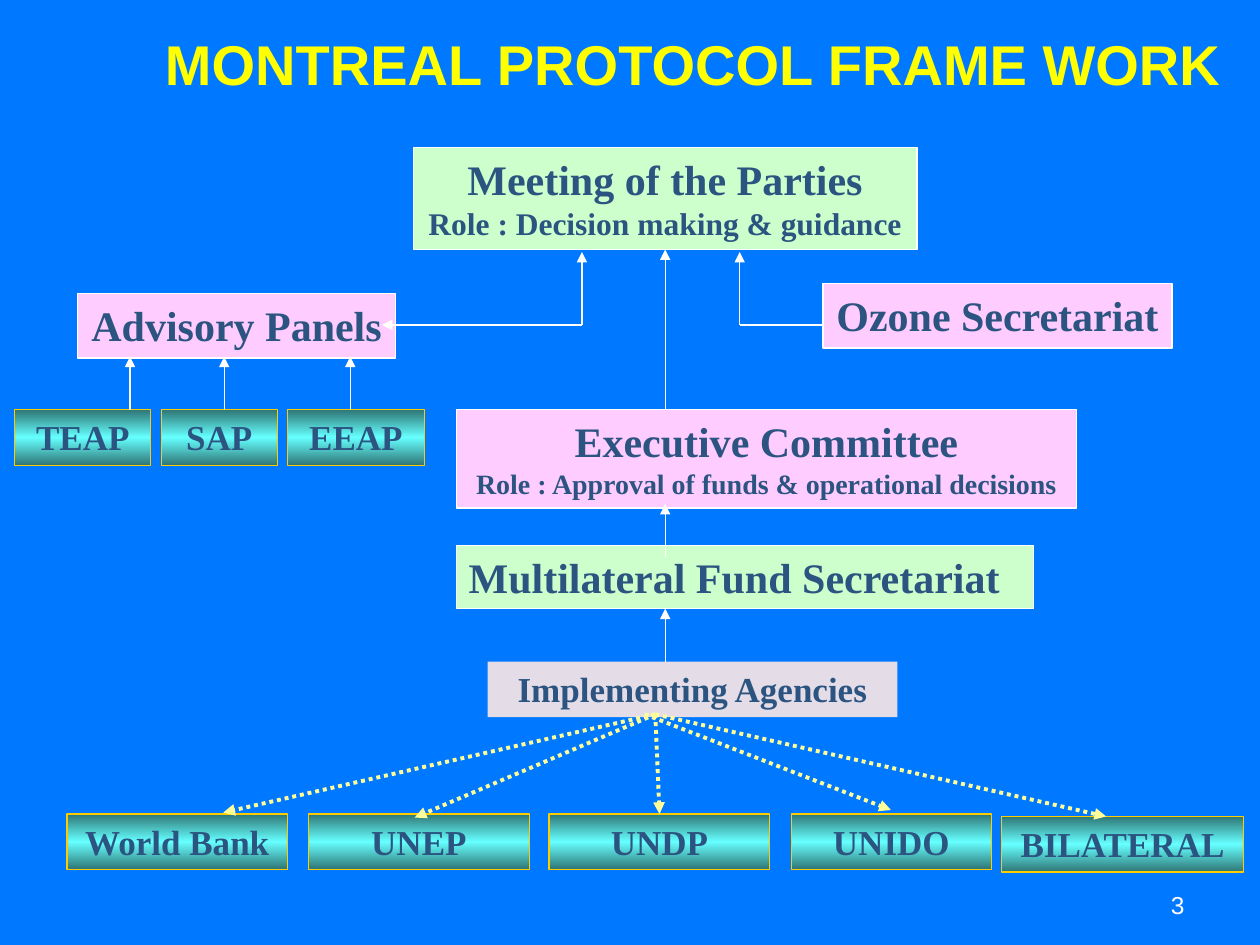
"""Build the Montreal Protocol framework slide."""
from copy import deepcopy
from dataclasses import dataclass

from pptx import Presentation
from pptx.dml.color import RGBColor
from pptx.enum.dml import MSO_LINE
from pptx.enum.shapes import MSO_CONNECTOR, MSO_SHAPE
from pptx.enum.text import MSO_ANCHOR, MSO_AUTO_SIZE, PP_ALIGN
from pptx.oxml.ns import qn
from pptx.util import Cm, Pt

RECTANGLE, STRAIGHT = MSO_SHAPE.RECTANGLE, MSO_CONNECTOR.STRAIGHT
LEFT, CENTER, RIGHT = PP_ALIGN.LEFT, PP_ALIGN.CENTER, PP_ALIGN.RIGHT
TOP, MIDDLE, BOTTOM = MSO_ANCHOR.TOP, MSO_ANCHOR.MIDDLE, MSO_ANCHOR.BOTTOM
FIT_SHAPE, SYS_DOT = MSO_AUTO_SIZE.SHAPE_TO_FIT_TEXT, MSO_LINE.ROUND_DOT

WHITE, GOLD, PALE_YELLOW = "FFFFFF", "FFCC00", "FFFF99"
GREEN, PINK, LILAC = "CCFFCC", "FFCCFF", "E4DDE7"
TEAL, AQUA, NAVY = "2F7676", "66FFFF", "2B5481"
BODY_FONT = {"name": "Times New Roman", "bold": True}
TITLE_FONT = {"name": "Arial", "bold": True}
NUMBER_FONT = {"name": "Arial", "bold": False}


@dataclass(frozen=True)
class Body:
    """A box of the chart, placed in cm, with (text, points) lines."""
    left: float
    top: float
    width: float
    height: float
    lines: tuple
    fill: str | None = None
    border: str | None = WHITE
    align: PP_ALIGN = CENTER
    wrap: bool = True


@dataclass(frozen=True)
class Arrow:
    """An arrow between two points in cm, with boxes joined at its end."""
    start: tuple
    end: tuple
    color: str = WHITE
    weight: float = 0.75
    dotted: bool = False
    target: str | None = None
    side: int = 2


def unit(name: str, left: float, top: float, width: float) -> Body:
    """Describe a small gradient box for a panel or an agency."""
    return Body(left, top, width, 1.12, ((name, 20),), border=GOLD)


def fan(end: tuple, start_x: float = 13.21, target: str | None = None) -> Arrow:
    """Describe a dotted arrow from the agencies box to one agency."""
    return Arrow((start_x, 14.4), end, PALE_YELLOW, 2.25, True, target, 0)


ROW, PANEL_ROW, TRUNK, ELBOW, MEETING_FOOT = 16.41, 8.26, 13.41, 6.55, 5.08
MEETING = "Meeting of the Parties"
BODIES = (
    Body(9.2, 11, 11.63, 1.27, (("Multilateral Fund Secretariat", 24),), GREEN, align=LEFT),
    Body(9.2, PANEL_ROW, 12.5, 1.98,
         (("Executive Committee", 24),
          ("Role : Approval of funds & operational decisions", 16)), PINK),
    unit("World Bank", 1.35, ROW, 4.45),
    unit("UNEP", 6.22, ROW, 4.45),
    unit("UNDP", 11.07, ROW, 4.45),
    unit("UNIDO", 15.95, ROW, 4.04),
    Body(9.83, 13.34, 8.26, 1.12, (("Implementing Agencies", 20),), LILAC, None),
    Body(8.33, 2.97, 10.16, 2.06,
         ((MEETING, 24), ("Role : Decision making & guidance", 18)), GREEN),
    unit("BILATERAL", 20.19, 16.46, 4.88),
    Body(16.59, 5.72, 7.04, 1.3, (("Ozone Secretariat", 24),), PINK, wrap=False),
    Body(1.57, 5.92, 6.4, 1.3, (("Advisory Panels", 24),), PINK, wrap=False),
    unit("TEAP", 0.3, PANEL_ROW, 2.74),
    unit("SAP", 3.25, PANEL_ROW, 2.34),
    unit("EEAP", 5.79, PANEL_ROW, 2.77),
)
OZONE_LINK = Arrow((14.91, ELBOW), (17.86, ELBOW))
ARROWS = (
    fan((4.5, 16.38)),
    fan((8.36, 16.48)),
    fan((13.31, ROW), target="UNDP"),
    fan((17.96, 16.33), 13),
    fan((22.3, 16.46)),
    Arrow((14.91, ELBOW), (14.91, MEETING_FOOT)),
    Arrow((11.73, ELBOW), (7.7, ELBOW)),
    Arrow((11.73, ELBOW), (11.73, MEETING_FOOT)),
    *(Arrow((x, PANEL_ROW), (x, 7.19)) for x in (2.62, 4.52, 7.06)),
    Arrow((TRUNK, PANEL_ROW), (TRUNK, MEETING_FOOT), target=MEETING),
    Arrow((TRUNK, 11.23), (TRUNK, 10.16)),
    Arrow((TRUNK, 13.34), (TRUNK, 12.27)),
)


def rgb(value: str) -> RGBColor:
    """Turn a hex string into a colour."""
    return RGBColor.from_string(value)


def write(frame, lines: tuple, style: dict, color: str, align: PP_ALIGN, **layout) -> None:
    """Fill a text frame with (text, points) lines in one style."""
    for key, value in layout.items():
        setattr(frame, key, value)
    for index, (text, points) in enumerate(lines):
        paragraph = frame.add_paragraph() if index else frame.paragraphs[0]
        paragraph.alignment = align
        run = paragraph.add_run()
        run.text = text
        for key, value in {**style, "size": Pt(points)}.items():
            setattr(run.font, key, value)
        run.font.color.rgb = rgb(color)


def paint_gradient(box) -> None:
    """Shade a box from teal through aqua back to teal."""
    box.fill.gradient()
    box.fill.gradient_angle = 270
    first, last = box.fill.gradient_stops
    first.color.rgb = last.color.rgb = rgb(TEAL)
    first.position, last.position = 0, 1
    stops = box._element.spPr.find(qn("a:gradFill")).find(qn("a:gsLst"))
    stops.insert(1, deepcopy(stops[0]))
    middle = box.fill.gradient_stops[1]
    middle.position = 0.5
    middle.color.rgb = rgb(AQUA)


def draw_body(slide, body: Body):
    """Draw one box of the chart and return it."""
    place = (body.left, body.top, body.width, body.height)
    box = slide.shapes.add_shape(RECTANGLE, *map(Cm, place))
    box.shadow.inherit = False
    if body.fill:
        box.fill.solid()
        box.fill.fore_color.rgb = rgb(body.fill)
    else:
        paint_gradient(box)
    if body.border:
        box.line.color.rgb = rgb(body.border)
        box.line.width = Pt(0.75)
    else:
        box.line.fill.background()
    write(box.text_frame, body.lines, BODY_FONT, NAVY, body.align, word_wrap=body.wrap,
          auto_size=FIT_SHAPE, vertical_anchor=TOP)
    return box


def draw_arrow(slide, arrow: Arrow, boxes: dict) -> None:
    """Draw one arrow, joined to its target box when it has one."""
    link = slide.shapes.add_connector(STRAIGHT, *map(Cm, arrow.start + arrow.end))
    if arrow.target:
        link.end_connect(boxes[arrow.target], arrow.side)
    link.line.color.rgb = rgb(arrow.color)
    link.line.width = Pt(arrow.weight)
    if arrow.dotted:
        link.line.dash_style = SYS_DOT
    properties = link._element.spPr
    outline = properties.find(qn("a:ln"))
    outline.append(outline.makeelement(qn("a:tailEnd"), {"type": "triangle"}))
    properties.append(properties.makeelement(qn("a:effectLst"), {}))


def main() -> None:
    """Build and save the slide."""
    deck = Presentation()
    deck.slide_width, deck.slide_height = Cm(25.4), Cm(19.05)
    slide = deck.slides.add_slide(deck.slide_layouts[6])
    slide.background.fill.solid()
    slide.background.fill.fore_color.rgb = rgb("0078FF")

    title = slide.shapes.add_textbox(Cm(2.54), Cm(0), Cm(22.86), Cm(2.54))
    write(title.text_frame, (("MONTREAL PROTOCOL FRAME WORK", 32),), TITLE_FONT, "FFFF00",
          CENTER, word_wrap=True, vertical_anchor=MIDDLE)
    draw_arrow(slide, OZONE_LINK, {})
    boxes = {body.lines[0][0]: draw_body(slide, body) for body in BODIES}
    for arrow in ARROWS:
        draw_arrow(slide, arrow, boxes)
    page_number = slide.shapes.add_textbox(Cm(18.21), Cm(17.35), Cm(5.92), Cm(1.32))
    write(page_number.text_frame, (("3", 14),), NUMBER_FONT, WHITE, RIGHT,
          word_wrap=True, vertical_anchor=BOTTOM)
    deck.save("out.pptx")


if __name__ == "__main__":
    main()
